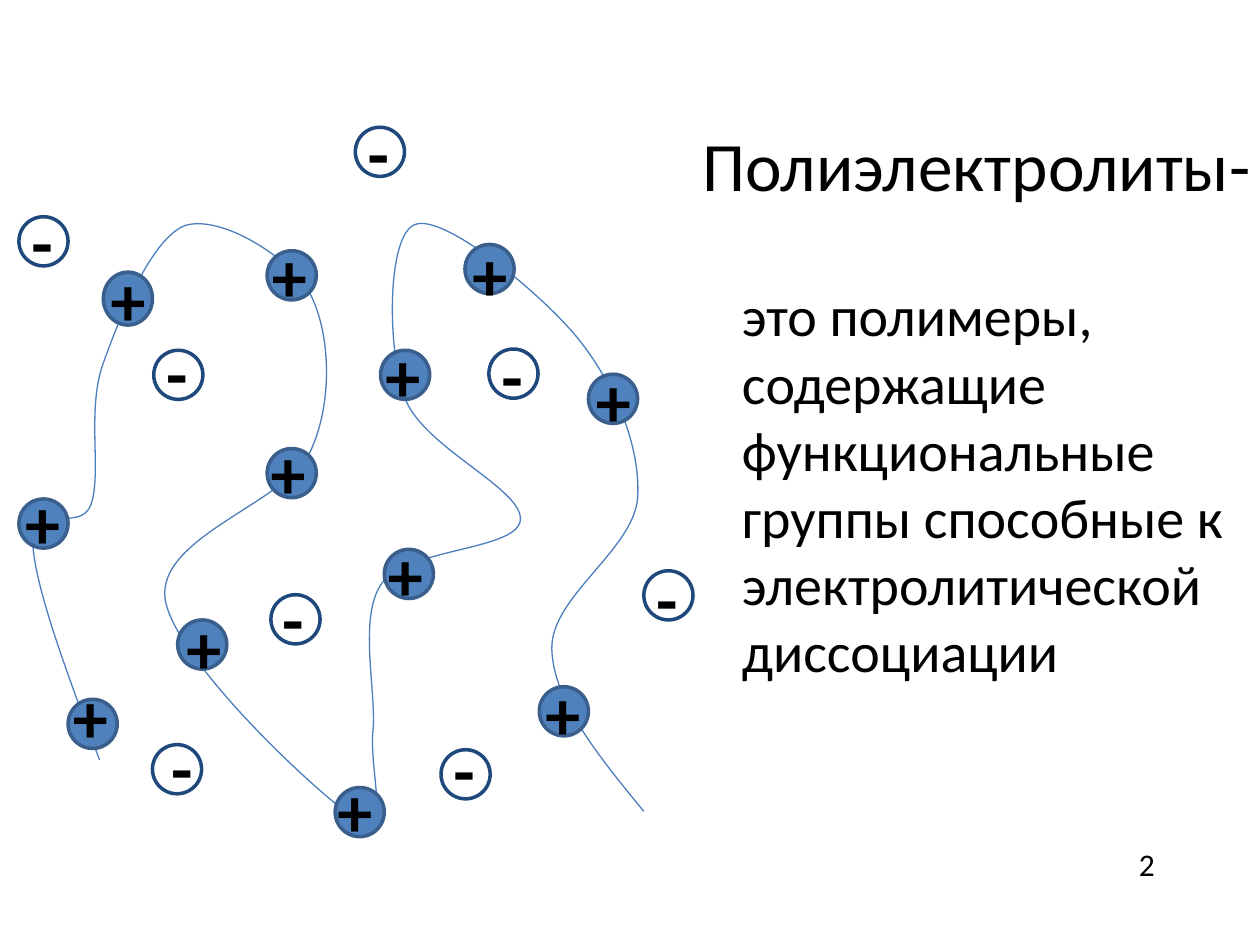
import lxml.etree
import pptx
import pptx.dml.color
import pptx.enum.shapes
import pptx.enum.text
import pptx.oxml.ns
import pptx.util

Inches, Pt = pptx.util.Inches, pptx.util.Pt
RGBColor = pptx.dml.color.RGBColor
ALIGN, ANCHOR = pptx.enum.text.PP_ALIGN, pptx.enum.text.MSO_ANCHOR
AUTO_SIZE = pptx.enum.text.MSO_AUTO_SIZE
qn = pptx.oxml.ns.qn

BLACK = RGBColor(0x00, 0x00, 0x00)
WHITE = RGBColor(0xFF, 0xFF, 0xFF)
BLUE = RGBColor(0x4F, 0x81, 0xBD)
DARK_BLUE = RGBColor(0x3A, 0x5F, 0x8C)
NAVY = RGBColor(0x1F, 0x49, 0x7D)
CHAIN_BLUE = RGBColor(0x4B, 0x7E, 0xBC)

TITLE = "Полиэлектролиты-"
DEFINITION = ("это полимеры, содержащие функциональные группы "
              "способные к электролитической диссоциации")
PAGE_NUMBER = "2"

# Polymer chain: box, start point, then cubic curves (two controls and an end)
CHAIN_BOX = (0.26, 1.77, 4.85, 4.78)
CHAIN_START = (5.11, 6.44)
CHAIN_CURVES = [
    ((4.75, 6.00), (4.39, 5.56), (4.38, 5.15)),
    ((4.37, 4.74), (5.02, 4.37), (5.06, 3.96)),
    ((5.09, 3.55), (4.88, 3.05), (4.59, 2.69)),
    ((4.30, 2.33), (3.53, 1.70), (3.30, 1.78)),
    ((3.07, 1.85), (3.07, 2.76), (3.21, 3.15)),
    ((3.35, 3.55), (4.16, 3.88), (4.13, 4.13)),
    ((4.10, 4.37), (3.23, 4.35), (3.03, 4.63)),
    ((2.84, 4.90), (2.99, 5.49), (2.96, 5.80)),
    ((2.93, 6.12), (3.11, 6.69), (2.84, 6.51)),
    ((2.56, 6.34), (1.38, 5.24), (1.31, 4.75)),
    ((1.25, 4.26), (2.27, 3.99), (2.46, 3.59)),
    ((2.65, 3.19), (2.62, 2.63), (2.46, 2.33)),
    ((2.30, 2.04), (1.75, 1.70), (1.47, 1.79)),
    ((1.20, 1.89), (0.94, 2.54), (0.81, 2.91)),
    ((0.69, 3.28), (0.81, 3.77), (0.72, 4.01)),
    ((0.63, 4.24), (0.24, 3.96), (0.26, 4.30)),
    ((0.27, 4.64), (0.53, 5.34), (0.79, 6.03)),
]

# Ions: circle left and top, sign box left and top
CATIONS = [
    (0.54, 5.55, 0.48, 5.30), (3.02, 2.78, 2.96, 2.59),
    (3.05, 4.36, 2.98, 4.17), (2.66, 6.25, 2.58, 6.04),
    (1.41, 4.92, 1.38, 4.75), (2.12, 3.56, 2.05, 3.36),
    (2.12, 1.99, 2.06, 1.80), (0.82, 2.16, 0.78, 1.99),
    (0.15, 3.96, 0.10, 3.76), (4.28, 5.45, 4.23, 5.27),
    (4.67, 2.97, 4.63, 2.79), (3.69, 1.94, 3.65, 1.79),
]
ANIONS = [
    (1.21, 5.91, 1.26, 5.70), (5.11, 4.53, 5.11, 4.36),
    (3.50, 5.95, 3.50, 5.72), (0.15, 1.72, 0.15, 1.53),
    (3.88, 2.77, 3.88, 2.59), (2.15, 4.72, 2.14, 4.52),
    (1.22, 2.78, 1.22, 2.57), (2.82, 1.01, 2.82, 0.82),
]
# Sign, sign box width, wrapping, circle fill, circle line, places
ION_KINDS = [
    ("+", 0.48, False, BLUE, DARK_BLUE, CATIONS),
    ("-", 0.41, True, WHITE, NAVY, ANIONS),
]
ION_SIZE = 0.39
TALL_ION, TALL_HEIGHT = (0.82, 2.16), 0.42
SIGN_HEIGHT = 0.77


def add_text(page, text, left, top, width, height, size, bold=False, wrap=True,
             align=ALIGN.LEFT, anchor=ANCHOR.TOP, fit=AUTO_SIZE.NONE):
    box = page.shapes.add_textbox(
        Inches(left), Inches(top), Inches(width), Inches(height))
    frame = box.text_frame
    frame.word_wrap = wrap
    frame.auto_size = fit
    frame.vertical_anchor = anchor
    para = frame.paragraphs[0]
    para.alignment = align
    span = para.add_run()
    span.text = text
    span.font.name = "Calibri"
    span.font.size = Pt(size)
    span.font.bold = bold
    span.font.color.rgb = BLACK
    return para


def add_chain(page):
    left, top, width, height = (Inches(value) for value in CHAIN_BOX)
    builder = page.shapes.build_freeform(*(Inches(value) for value in CHAIN_START))
    ends = [tuple(Inches(value) for value in curve[-1]) for curve in CHAIN_CURVES]
    builder.add_line_segments(ends, close=False)
    chain = builder.convert_to_shape()
    chain.left, chain.top, chain.width, chain.height = left, top, width, height

    # Curves take the place of the straight segments
    outline = next(chain._element.iter(qn("a:path")))
    outline.set("w", str(width))
    outline.set("h", str(height))
    for segment in list(outline):
        outline.remove(segment)
    steps = [("a:moveTo", [CHAIN_START])]
    steps += [("a:cubicBezTo", curve) for curve in CHAIN_CURVES]
    for tag, points in steps:
        step = lxml.etree.SubElement(outline, qn(tag))
        for x, y in points:
            lxml.etree.SubElement(step, qn("a:pt"), x=str(Inches(x) - left),
                                  y=str(Inches(y) - top))

    chain.shadow.inherit = False
    chain.fill.background()
    chain.line.color.rgb = CHAIN_BLUE
    chain.line.width = Pt(0.75)


def add_circle(page, left, top, fill, line):
    height = TALL_HEIGHT if (left, top) == TALL_ION else ION_SIZE
    circle = page.shapes.add_shape(
        pptx.enum.shapes.MSO_SHAPE.OVAL,
        Inches(left), Inches(top), Inches(ION_SIZE), Inches(height))
    circle.shadow.inherit = False
    circle.fill.solid()
    circle.fill.fore_color.rgb = fill
    circle.line.color.rgb = line
    circle.line.width = Pt(2)


def main():
    deck = pptx.Presentation()
    deck.slide_width, deck.slide_height = Inches(10), Inches(7.5)
    page = deck.slides.add_slide(deck.slide_layouts[6])

    # Title, definition and page number
    add_text(page, TITLE, 5.36, 0.63, 4.78, 1.34, 39.6,
             align=ALIGN.CENTER, anchor=ANCHOR.MIDDLE)
    definition = add_text(page, DEFINITION, 5.79, 2.18, 4.37, 5.08, 32)
    definition.space_before = Pt(6.4)
    add_text(page, PAGE_NUMBER, 8.94, 6.66, 0.39, 0.4, 18,
             fit=AUTO_SIZE.SHAPE_TO_FIT_TEXT)

    # Chain below the ions
    add_chain(page)

    # Circles, then their signs on top
    for _, _, _, fill, line, places in ION_KINDS:
        for left, top, _, _ in places:
            add_circle(page, left, top, fill, line)
    for sign, width, wrap, _, _, places in ION_KINDS:
        for _, _, left, top in places:
            add_text(page, sign, left, top, width, SIGN_HEIGHT, 40, bold=True,
                     wrap=wrap, fit=AUTO_SIZE.SHAPE_TO_FIT_TEXT)

    deck.save("out.pptx")


if __name__ == "__main__":
    main()
